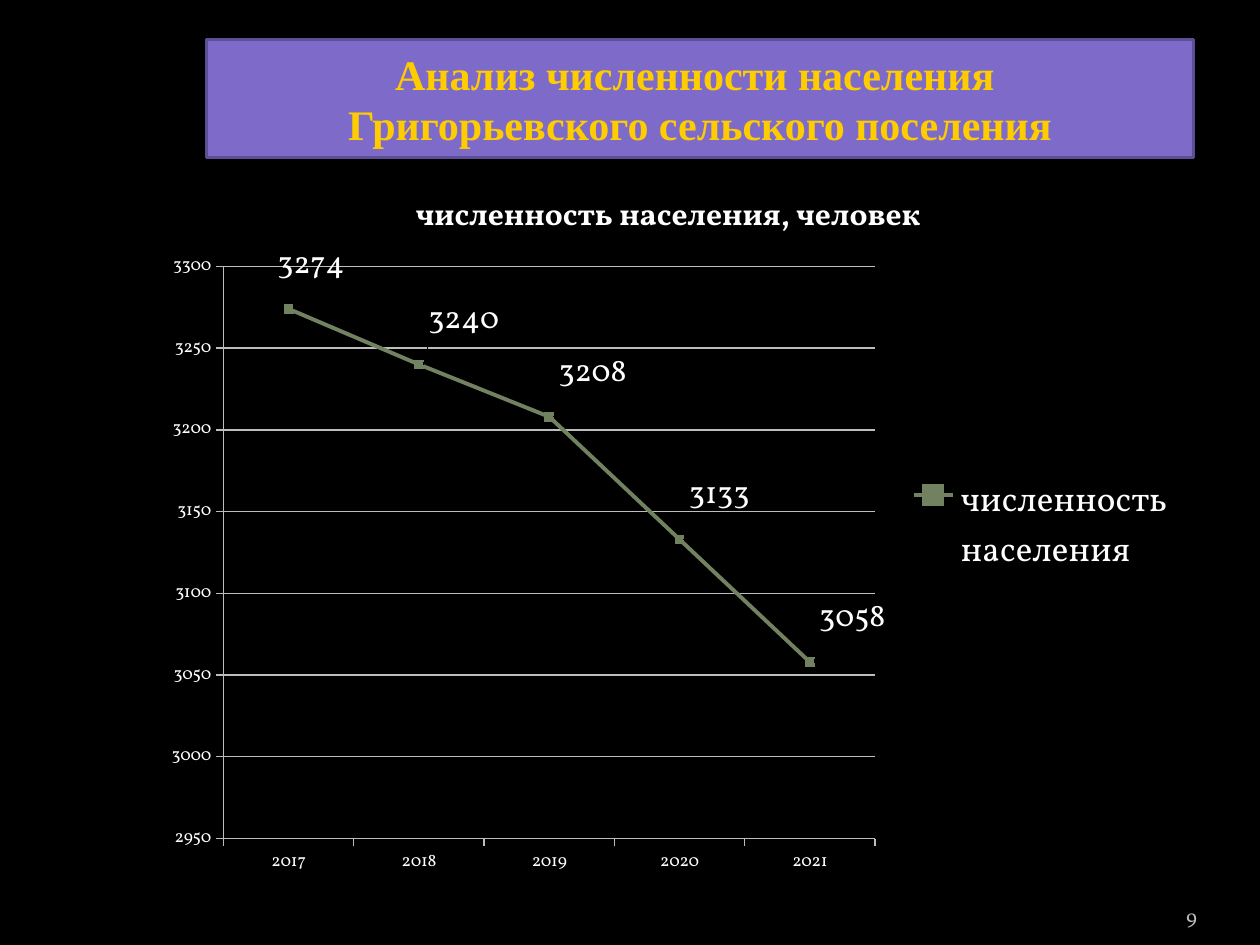
from lxml.etree import SubElement
from pptx import Presentation
from pptx.chart.data import CategoryChartData
from pptx.dml.color import RGBColor
from pptx.enum.chart import XL_CHART_TYPE as ChartType
from pptx.enum.chart import XL_LABEL_POSITION as LabelPosition
from pptx.enum.chart import XL_LEGEND_POSITION as LegendPosition
from pptx.enum.chart import XL_MARKER_STYLE as Marker
from pptx.enum.chart import XL_TICK_MARK as Tick
from pptx.enum.shapes import MSO_SHAPE as Shape
from pptx.enum.text import MSO_ANCHOR as Anchor
from pptx.enum.text import PP_ALIGN as Align
from pptx.oxml.ns import qn
from pptx.util import Pt

BLACK = RGBColor(0x00, 0x00, 0x00)
WHITE = RGBColor(0xFF, 0xFF, 0xFF)
VIOLET = RGBColor(0x7E, 0x6B, 0xC9)
DARK_VIOLET = RGBColor(0x5D, 0x4F, 0x95)
GOLD = RGBColor(0xFF, 0xCC, 0x00)
GREY = RGBColor(0xBD, 0xBD, 0xBD)
GREEN = RGBColor(0x72, 0x81, 0x5F)
BODY_FONT = "Vollkorn"

HEADING = ["Анализ численности населения ", "Григорьевского сельского поселения"]
CHART_TITLE = "численность населения, человек"
SERIES_NAME = "численность населения"
POPULATION = {"2017": 3274, "2018": 3240, "2019": 3208, "2020": 3133, "2021": 3058}
LABEL_SHIFTS = [(-0.02, -0.06)] + [(0, -0.06)] * 4
PAGE_NUMBER = "9"


def style_font(font, size, color=WHITE, name=BODY_FONT, bold=False):
    font.size, font.name, font.bold = Pt(size), name, bold
    font.color.rgb = color


def write(frame, lines, align=Align.CENTER, **style):
    para = frame.paragraphs[0]
    para.alignment = align
    for index, line in enumerate(lines):
        if index:
            para.add_line_break()
        span = para.add_run()
        span.text = line
        style_font(span.font, **style)


def place(element, after, **values):
    for old in element.findall(qn("c:layout")):
        element.remove(old)
    layout = SubElement(element, qn("c:layout"))
    manual = SubElement(layout, qn("c:manualLayout"))
    for tag, value in values.items():
        SubElement(manual, qn("c:" + tag)).set("val", str(value))
    element.remove(layout)
    anchor = element.find(qn(after)) if after else None
    if anchor is None:
        element.insert(0, layout)
    else:
        anchor.addnext(layout)


def add_heading(page):
    box = page.shapes.add_shape(Shape.RECTANGLE, Pt(118), Pt(22.5), Pt(564), Pt(67.5))
    box.shadow.inherit = False
    box.fill.solid()
    box.fill.fore_color.rgb = VIOLET
    box.line.color.rgb = DARK_VIOLET
    box.line.width = Pt(2)
    box.text_frame.word_wrap = False
    box.text_frame.vertical_anchor = Anchor.MIDDLE
    write(box.text_frame, HEADING, size=24, color=GOLD, name="Times New Roman", bold=True)


def add_page_number(page):
    box = page.shapes.add_textbox(Pt(624), Pt(505.5), Pt(60), Pt(28.8))
    frame = box.text_frame
    frame.word_wrap = True
    frame.vertical_anchor = Anchor.BOTTOM
    frame.margin_left = frame.margin_right = 0
    write(frame, [PAGE_NUMBER], align=Align.RIGHT, size=12, color=GREY)


def style_axes(chart):
    for axis in (chart.category_axis, chart.value_axis):
        axis.major_tick_mark = Tick.OUTSIDE
        axis.minor_tick_mark = Tick.NONE
        axis.format.line.color.rgb = GREY
        axis.format.line.width = Pt(0.75)
        style_font(axis.tick_labels.font, 10)
    values = chart.value_axis
    values.minimum_scale, values.maximum_scale, values.major_unit = 2950, 3300, 50
    values.has_major_gridlines = True
    values.major_gridlines.format.line.color.rgb = GREY
    values.major_gridlines.format.line.width = Pt(0.75)


def style_series(series):
    series.smooth = False
    series.format.line.color.rgb = GREEN
    series.format.line.width = Pt(2.25)
    series.marker.style = Marker.SQUARE
    series.marker.size = 5
    series.marker.format.fill.solid()
    series.marker.format.fill.fore_color.rgb = GREEN
    series.marker.format.line.color.rgb = GREEN
    labels = series.data_labels
    labels.show_value = True
    labels.position = LabelPosition.RIGHT
    style_font(labels.font, 18)
    for index, (x, y) in enumerate(LABEL_SHIFTS):
        label = series.points[index].data_label
        label.position = LabelPosition.RIGHT
        style_font(label.font, 18)
    for element, (x, y) in zip(labels._element.findall(qn("c:dLbl")), LABEL_SHIFTS):
        place(element, "c:idx", x=x, y=y)


def add_population_chart(page):
    data = CategoryChartData()
    data.categories = list(POPULATION)
    data.add_series(SERIES_NAME, list(POPULATION.values()))
    chart = page.shapes.add_chart(
        ChartType.LINE_MARKERS_STACKED, Pt(86.4), Pt(94.3), Pt(591), Pt(414), data
    ).chart
    style_font(chart.font, 10)
    chart.has_title = True
    write(chart.chart_title.text_frame, [CHART_TITLE], size=18, bold=True)
    chart.has_legend = True
    chart.legend.position = LegendPosition.RIGHT
    chart.legend.include_in_layout = False
    style_font(chart.legend.font, 20)
    chart.plots[0].vary_by_categories = False
    style_axes(chart)
    style_series(chart.plots[0].series[0])
    plot_area = chart._chartSpace.chart.plotArea
    place(plot_area, None, layoutTarget="inner", xMode="edge", yMode="edge",
          x=0.07, y=0.14, w=0.63, h=0.79)
    place(chart.legend._element, "c:legendPos", xMode="edge", yMode="edge",
          x=0.73, y=0.42, w=0.26, h=0.16)


def main():
    deck = Presentation()
    deck.slide_width, deck.slide_height = Pt(720), Pt(540)
    page = deck.slides.add_slide(deck.slide_layouts[6])
    page.background.fill.solid()
    page.background.fill.fore_color.rgb = BLACK
    add_heading(page)
    add_page_number(page)
    add_population_chart(page)
    deck.save("out.pptx")


if __name__ == "__main__":
    main()
